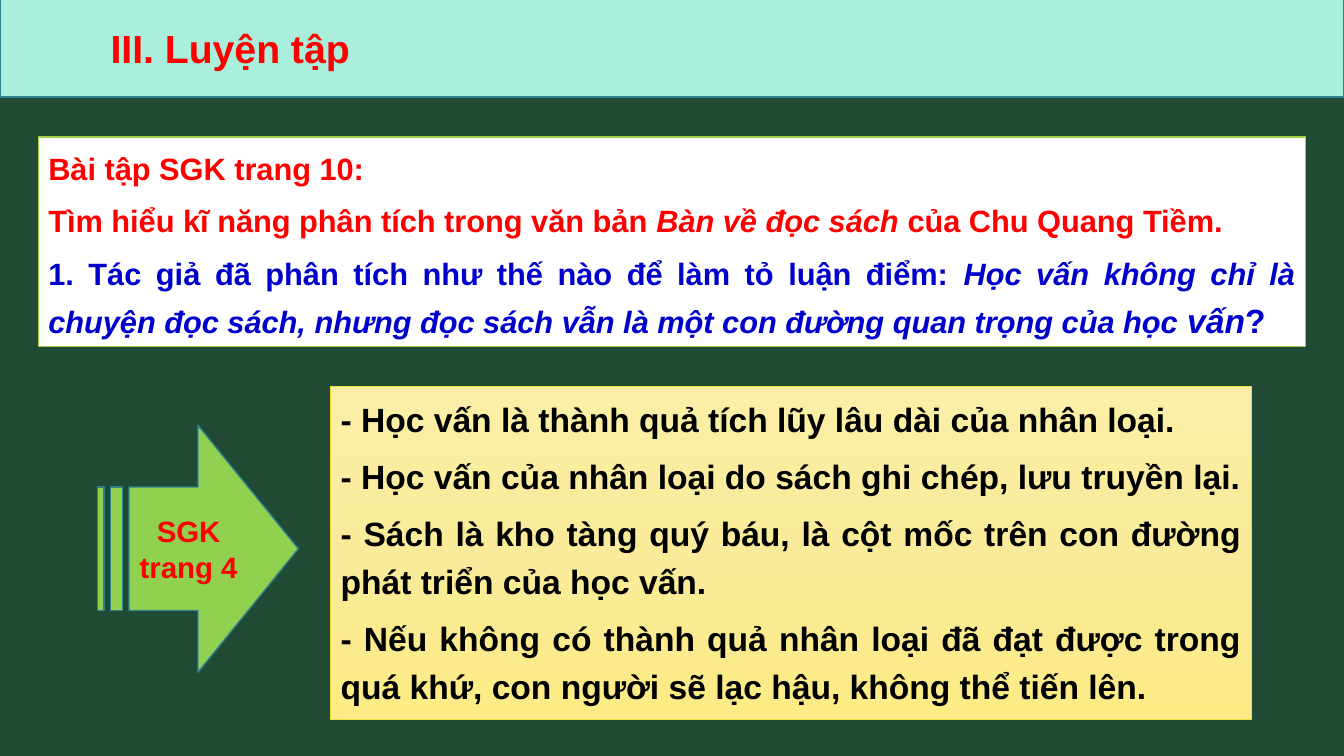
from copy import deepcopy
from dataclasses import dataclass

from pptx import Presentation
from pptx.dml.color import RGBColor
from pptx.enum.shapes import MSO_SHAPE as Preset
from pptx.enum.text import MSO_ANCHOR as Anchor, PP_ALIGN as Align
from pptx.oxml.ns import qn
from pptx.util import Pt


@dataclass(frozen=True)
class Theme:
    font: str = "Arial"
    background: str = "214A34"
    banner: str = "AAEEDC"
    outline: str = "30818C"
    paper: str = "FFFFFF"
    paper_edge: str = "A2CF49"
    answer_stops: tuple = ((0, "FBEFA7"), (0.5, "F9EB99"), (1, "FDEB85"))
    answer_edge: str = "F4DE3A"
    arrow: str = "92D050"
    accent: str = "FF0000"
    question: str = "0000CC"
    ink: str = "000000"
    title_size: int = 28
    answer_size: int = 24
    exercise_size: int = 22
    arrow_size: int = 21


THEME = Theme()

EXERCISE = [
    (THEME.accent, [("Bài tập SGK trang 10:", False, None)]),
    (THEME.accent, [
        ("Tìm hiểu kĩ năng phân tích trong văn bản ", False, None),
        ("Bàn về đọc sách ", True, None),
        ("của Chu Quang Tiềm.", False, None),
    ]),
    (THEME.question, [
        ("1. Tác giả đã phân tích như thế nào để làm tỏ luận điểm: ", False, None),
        ("Học vấn không chỉ là chuyện đọc sách, nhưng đọc sách vẫn là "
         "một con đường quan trọng của học ", True, None),
        ("vấn", True, THEME.answer_size),
        ("?", False, THEME.answer_size),
    ]),
]

ANSWERS = [
    "- Học vấn là thành quả tích lũy lâu dài của nhân loại.",
    "- Học vấn của nhân loại do sách ghi chép, lưu truyền lại.",
    "- Sách là kho tàng quý báu, là cột mốc trên con đường phát triển của học vấn.",
    "- Nếu không có thành quả nhân loại đã đạt được trong quá khứ, "
    "con người sẽ lạc hậu, không thể tiến lên.",
]


def color(value):
    return RGBColor.from_string(value)


def add_panel(slide, box, preset, fill, edge, edge_width=1, anchor=Anchor.MIDDLE):
    shape = slide.shapes.add_shape(preset, *(Pt(length) for length in box))
    shape.shadow.inherit = False
    if fill:
        shape.fill.solid()
        shape.fill.fore_color.rgb = color(fill)
    shape.line.color.rgb = color(edge)
    shape.line.width = Pt(edge_width)
    shape.text_frame.word_wrap = True
    shape.text_frame.vertical_anchor = anchor
    return shape


def style_paragraph(paragraph, size, ink, alignment):
    paragraph.alignment = alignment
    paragraph.font.name = THEME.font
    paragraph.font.size = Pt(size)
    paragraph.font.bold = True
    paragraph.font.color.rgb = color(ink)


def add_body_paragraph(frame, index, size, ink):
    paragraph = frame.add_paragraph() if index else frame.paragraphs[0]
    style_paragraph(paragraph, size, ink, Align.JUSTIFY)
    paragraph.line_spacing = 1.2
    paragraph.space_before = Pt(6)
    return paragraph


def fill_gradient(shape, stops):
    shape.fill.gradient()
    shape.fill.gradient_angle = 270
    stop_list = shape.element.spPr.find(qn("a:gradFill")).find(qn("a:gsLst"))
    stop_list.insert(1, deepcopy(stop_list[0]))
    for stop, (position, value) in zip(shape.fill.gradient_stops, stops):
        stop.position = position
        stop.color.rgb = color(value)


def add_banner(slide, box):
    shape = add_panel(slide, box, Preset.RECTANGLE, THEME.banner, THEME.outline)
    shape.text_frame.margin_left = Pt(79)
    paragraph = shape.text_frame.paragraphs[0]
    paragraph.text = "III. Luyện tập"
    style_paragraph(paragraph, THEME.title_size, THEME.accent, Align.LEFT)


def add_exercise(slide, box):
    shape = add_panel(slide, box, Preset.RECTANGLE, THEME.paper,
                      THEME.paper_edge, anchor=Anchor.TOP)
    for index, (ink, pieces) in enumerate(EXERCISE):
        paragraph = add_body_paragraph(
            shape.text_frame, index, THEME.exercise_size, ink)
        for text, italic, size in pieces:
            run = paragraph.add_run()
            run.text = text
            run.font.italic = italic
            if size:
                run.font.size = Pt(size)


def add_answers(slide, box):
    shape = add_panel(slide, box, Preset.RECTANGLE, None,
                      THEME.answer_edge, 0.5, Anchor.TOP)
    fill_gradient(shape, THEME.answer_stops)
    for index, answer in enumerate(ANSWERS):
        paragraph = add_body_paragraph(
            shape.text_frame, index, THEME.answer_size, THEME.ink)
        paragraph.text = answer


def add_arrow(slide, box):
    shape = add_panel(slide, box, Preset.STRIPED_RIGHT_ARROW,
                      THEME.arrow, THEME.outline)
    paragraph = shape.text_frame.paragraphs[0]
    paragraph.text = "SGK trang 4"
    style_paragraph(paragraph, THEME.arrow_size, THEME.accent, Align.CENTER)


def main():
    presentation = Presentation()
    presentation.slide_width = Pt(960)
    presentation.slide_height = Pt(540)
    slide = presentation.slides.add_slide(presentation.slide_layouts[6])
    slide.background.fill.solid()
    slide.background.fill.fore_color.rgb = color(THEME.background)
    add_exercise(slide, (27.4, 97.9, 905, 149.8))
    add_answers(slide, (236.2, 275.8, 657.4, 238.3))
    add_arrow(slide, (69.8, 303.8, 143.3, 176.4))
    add_banner(slide, (0, -1.4, 960, 70.6))
    presentation.save("out.pptx")


if __name__ == "__main__":
    main()
